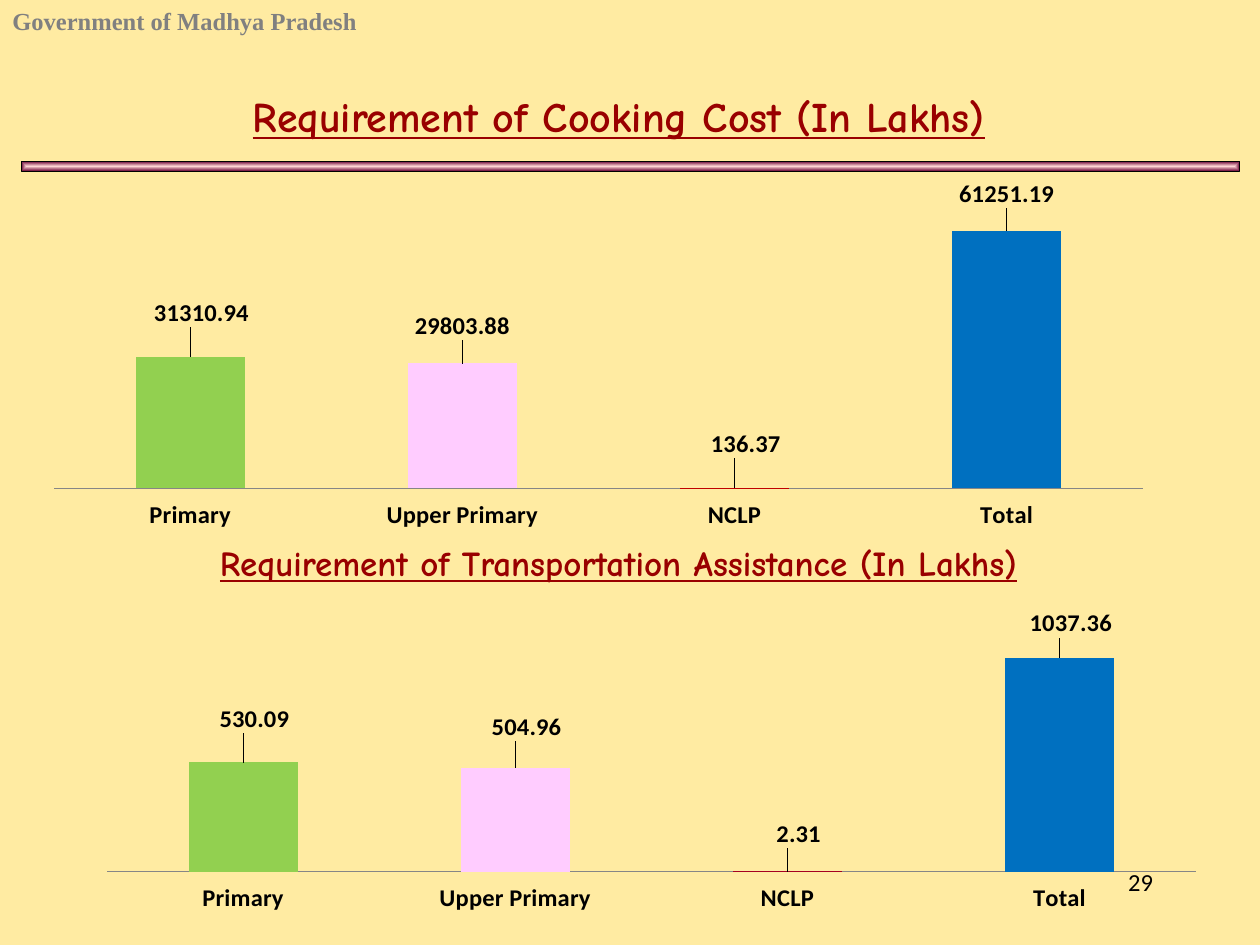
from dataclasses import dataclass

from lxml.etree import SubElement
from pptx import Presentation
from pptx.chart.data import CategoryChartData
from pptx.dml.color import RGBColor
from pptx.enum.chart import XL_CHART_TYPE, XL_LABEL_POSITION, XL_TICK_LABEL_POSITION, XL_TICK_MARK
from pptx.enum.shapes import MSO_SHAPE
from pptx.enum.text import MSO_ANCHOR, PP_ALIGN
from pptx.oxml import parse_xml
from pptx.oxml.ns import nsdecls, qn
from pptx.util import Inches, Pt


@dataclass(frozen=True)
class Theme:
    background: str = "FFEBA2"
    heading: str = "990000"
    header: str = "808080"
    text: str = "000000"
    axis: str = "868686"
    rule_center: str = "FFD5D5"
    rule_edge: str = "660033"
    primary: str = "92D050"
    upper_primary: str = "FFCCFF"
    cooking_nclp: str = "C00000"
    transport_nclp: str = "A50021"
    total: str = "0070C0"
    heading_font: str = "Comic Neue"
    header_font: str = "Times New Roman"
    body_font: str = "Calibri"
    title_size: int = 24
    subtitle_size: int = 20
    body_size: int = 14


THEME = Theme()
CATEGORIES = ["Primary", "Upper Primary", "NCLP", "Total"]


def color(value):
    return RGBColor.from_string(value)


def format_font(font, size=THEME.body_size, name=THEME.body_font,
                fill=THEME.text, bold=False, underline=None):
    font.size, font.name, font.bold = Pt(size), name, bold
    font.color.rgb = color(fill)
    if underline is not None:
        font.underline = underline


def place(shape, left, top, width, height):
    shape.left, shape.top = Inches(left), Inches(top)
    shape.width, shape.height = Inches(width), Inches(height)


def write_text(shape, text, align=PP_ALIGN.LEFT, **font_format):
    frame = shape.text_frame
    frame.word_wrap = True
    frame.vertical_anchor = MSO_ANCHOR.TOP
    paragraph = frame.paragraphs[0]
    paragraph.alignment = align
    run = paragraph.add_run()
    run.text = text
    format_font(run.font, **font_format)


def add_text(slide, text, box, **text_format):
    shape = slide.shapes.add_textbox(*map(Inches, box))
    write_text(shape, text, **text_format)


def add_rule(slide, box):
    shape = slide.shapes.add_shape(MSO_SHAPE.RECTANGLE, *map(Inches, box))
    shape.shadow.inherit = False
    shape.line.color.rgb = color(THEME.text)
    shape.line.width = Pt(0.5)
    # Gradient that spreads from the centre to the edges
    gradient = parse_xml(
        f'<a:gradFill {nsdecls("a")} rotWithShape="1"><a:gsLst>'
        f'<a:gs pos="0"><a:srgbClr val="{THEME.rule_center}"/></a:gs>'
        f'<a:gs pos="100000"><a:srgbClr val="{THEME.rule_edge}"/></a:gs>'
        '</a:gsLst><a:path path="shape">'
        '<a:fillToRect l="50000" t="50000" r="50000" b="50000"/>'
        '</a:path></a:gradFill>')
    shape._element.spPr.find(qn("a:prstGeom")).addnext(gradient)


def set_layout(layout, **settings):
    manual = SubElement(layout, qn("c:manualLayout"))
    for tag, value in settings.items():
        SubElement(manual, qn(f"c:{tag}")).set("val", str(value))


def place_plot(chart, top, height):
    plot_area = chart._chartSpace.chart.plotArea
    layout = plot_area.find(qn("c:layout"))
    if layout is None:
        layout = plot_area.makeelement(qn("c:layout"))
        plot_area.insert(0, layout)
    set_layout(layout, layoutTarget="inner", xMode="edge", yMode="edge",
               x=0.02, y=top, w=0.96, h=height)


def format_axes(chart, maximum):
    category_axis, value_axis = chart.category_axis, chart.value_axis
    category_axis.major_tick_mark = XL_TICK_MARK.NONE
    category_axis.tick_label_position = XL_TICK_LABEL_POSITION.LOW
    category_axis.format.line.color.rgb = color(THEME.axis)
    format_font(category_axis.tick_labels.font, bold=True)
    value_axis.visible = False
    value_axis.has_major_gridlines = False
    value_axis.minimum_scale, value_axis.maximum_scale = 0, maximum


def format_point(point, fill, shift):
    point.format.fill.solid()
    point.format.fill.fore_color.rgb = color(fill)
    label = point.data_label
    format_font(label.font, bold=True)
    label.position = XL_LABEL_POSITION.OUTSIDE_END
    # Shift of the label, as a share of the chart size
    element = label._dLbl
    layout = element.makeelement(qn("c:layout"))
    element.find(qn("c:idx")).addnext(layout)
    set_layout(layout, x=shift[0], y=shift[1])


def add_column_chart(slide, box, values, fills, shifts, maximum, plot):
    data = CategoryChartData(number_format="General")
    data.categories = CATEGORIES
    data.add_series("Series 1", values)
    frame = slide.shapes.add_chart(
        XL_CHART_TYPE.COLUMN_CLUSTERED, *map(Inches, box), data)
    chart = frame.chart
    chart.has_legend = chart.has_title = False
    format_font(chart.font)
    format_axes(chart, maximum)
    place_plot(chart, *plot)
    columns = chart.plots[0]
    columns.gap_width = 150
    columns.vary_by_categories = False
    for index, (fill, shift) in enumerate(zip(fills, shifts)):
        format_point(columns.series[0].points[index], fill, shift)


def main():
    presentation = Presentation()
    presentation.slide_width, presentation.slide_height = Inches(10), Inches(7.5)
    slide = presentation.slides.add_slide(presentation.slide_layouts[5])
    slide.background.fill.solid()
    slide.background.fill.fore_color.rgb = color(THEME.background)

    # Header and rule
    add_text(slide, "Government of Madhya Pradesh", (0, 0, 6.67, 0.34),
             name=THEME.header_font, fill=THEME.header, bold=True)
    add_rule(slide, (0.17, 1.28, 9.67, 0.08))

    # Headings
    heading = dict(align=PP_ALIGN.CENTER, name=THEME.heading_font,
                   fill=THEME.heading, bold=True, underline=True)
    title = slide.shapes.title
    place(title, 0, 0.67, 9.82, 0.5)
    write_text(title, "Requirement of Cooking Cost (In Lakhs)",
               size=THEME.title_size, **heading)
    add_text(slide, "Requirement of Transportation Assistance (In Lakhs)",
             (0, 4.25, 9.82, 0.44), size=THEME.subtitle_size, **heading)

    # Cooking cost
    add_column_chart(
        slide, (0.25, 1.42, 9, 2.79), [31310.94, 29803.88, 136.37, 61251.19],
        [THEME.primary, THEME.upper_primary, THEME.cooking_nclp, THEME.total],
        [(0.01, -0.07), (0.0, -0.05), (0.01, -0.07), (0.0, -0.05)],
        maximum=70000, plot=(0.03, 0.85))

    # Transportation assistance
    add_column_chart(
        slide, (0.67, 4.83, 9, 2.42), [530.09, 504.96, 2.31, 1037.36],
        [THEME.primary, THEME.upper_primary, THEME.transport_nclp, THEME.total],
        [(0.01, -0.08), (0.01, -0.07), (0.01, -0.06), (0.01, -0.05)],
        maximum=1200, plot=(0.04, 0.83))

    # Slide number
    add_text(slide, "29", (7.17, 6.83, 2.08, 0.5), align=PP_ALIGN.RIGHT)

    presentation.save("out.pptx")


if __name__ == "__main__":
    main()
